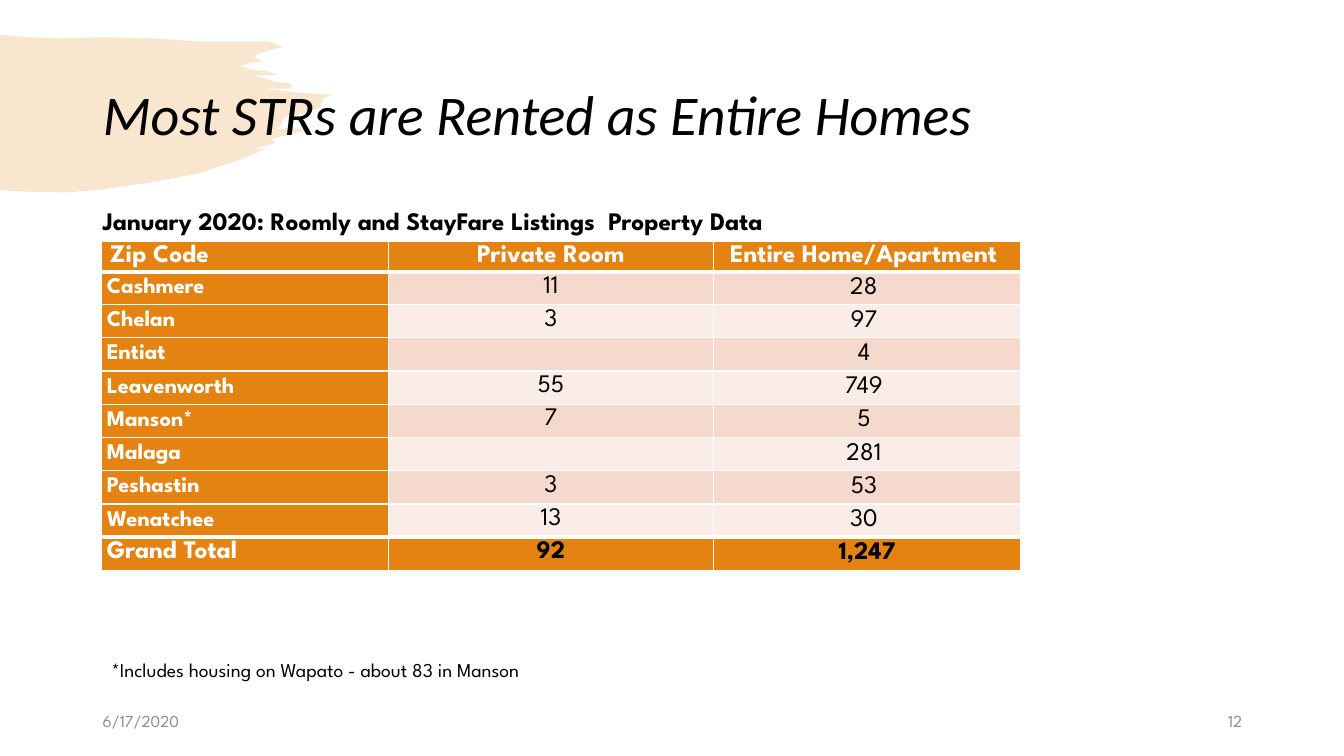
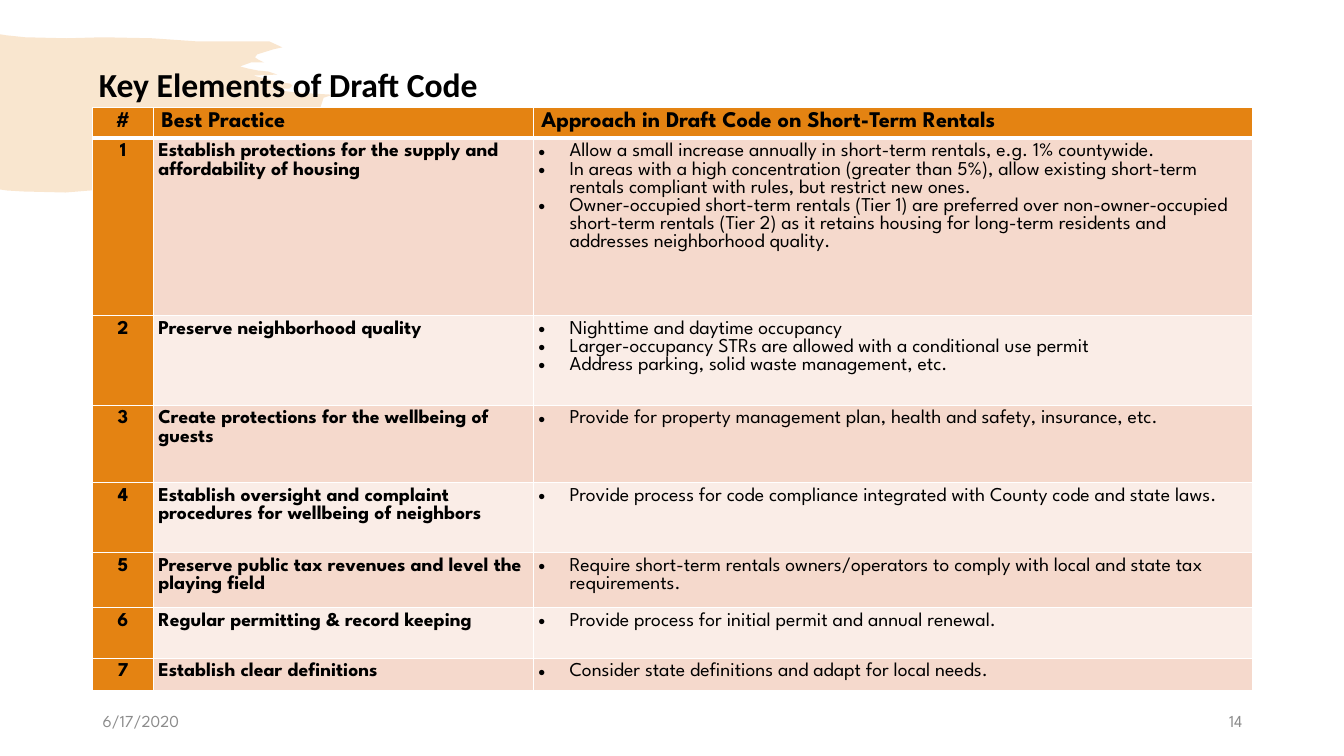
"""Builds two slides on short-term rentals: listing counts and key elements of the draft code."""
import lxml.etree
import pptx
import pptx.dml.color
import pptx.enum.text
import pptx.oxml.ns
import pptx.util

EMU_PER_PX = 9144
ORANGE = pptx.dml.color.RGBColor(0xE4, 0x83, 0x12)
DARK_BAND = pptx.dml.color.RGBColor(0xF5, 0xD9, 0xCC)
LIGHT_BAND = pptx.dml.color.RGBColor(0xFA, 0xED, 0xE7)
WHITE = pptx.dml.color.RGBColor(0xFF, 0xFF, 0xFF)
BLACK = pptx.dml.color.RGBColor(0, 0, 0)
GREY = pptx.dml.color.RGBColor(0x8C, 0x8C, 0x8C)
TITLE_FONT = "Calibri"
BODY_FONT = "League Spartan"
LEFT = pptx.enum.text.PP_ALIGN.LEFT
CENTER = pptx.enum.text.PP_ALIGN.CENTER
RIGHT = pptx.enum.text.PP_ALIGN.RIGHT
TOP = pptx.enum.text.MSO_ANCHOR.TOP
MIDDLE = pptx.enum.text.MSO_ANCHOR.MIDDLE
HEADER_INSETS = (8, 4)
COUNT_INSETS = (5, 4)
PRACTICE_INSETS = (5, 5)

BRUSH_OUTLINE = [
    (0, 34), (6, 35), (25, 37), (66, 38), (102, 37), (151, 38), (194, 41), (248, 41),
    (267, 41), (280, 47), (271, 49), (255, 54), (253, 57), (256, 59), (262, 62),
    (249, 62), (238, 66), (246, 68), (256, 70), (266, 71), (275, 74), (251, 75),
    (263, 78), (273, 81), (280, 82), (288, 83), (290, 85), (287, 88), (284, 88),
    (263, 88), (296, 92), (330, 94), (321, 97), (318, 106), (307, 111), (300, 113),
    (283, 116), (280, 120), (278, 125), (274, 128), (308, 128), (269, 138),
    (273, 142), (252, 148), (263, 148), (237, 159), (197, 172), (150, 181),
    (102, 188), (65, 191), (23, 190), (7, 189), (0, 188),
]
LISTINGS_HEADER = ["Zip Code", "Private Room", "Entire Home/Apartment "]
LISTINGS = [
    ["Cashmere", "11", "28 "],
    ["Chelan", "3", "97 "],
    ["Entiat", "", "4 "],
    ["Leavenworth", "55", "749 "],
    ["Manson*", "7", "5 "],
    ["Malaga", "", "281 "],
    ["Peshastin", "3", "53 "],
    ["Wenatchee", "13", "30 "],
]
LISTINGS_TOTAL = ["Grand Total", "92", "1,247"]
PRACTICES_HEADER = ["#", "Best Practice", "Approach in Draft Code on Short-Term Rentals"]
PRACTICES = [
    ("Establish protections for the supply and affordability of housing", [
        "Allow a small increase annually in short-term rentals, e.g. 1% countywide.",
        "In areas with a high concentration (greater than 5%), allow existing short-term "
        "rentals compliant with rules, but restrict new ones.",
        "Owner-occupied short-term rentals (Tier 1) are preferred over non-owner-occupied "
        "short-term rentals (Tier 2) as it retains housing for long-term residents and "
        "addresses neighborhood quality."]),
    ("Preserve neighborhood quality", [
        "Nighttime and daytime occupancy",
        "Larger-occupancy STRs are allowed with a conditional use permit",
        "Address parking, solid waste management, etc."]),
    ("Create protections for the wellbeing of guests", [
        "Provide for property management plan, health and safety, insurance, etc."]),
    ("Establish oversight and complaint procedures for wellbeing of neighbors", [
        "Provide process for code compliance integrated with County code and state laws."]),
    ("Preserve public tax revenues and level the playing field", [
        "Require short-term rentals owners/operators to comply with local and state tax "
        "requirements."]),
    ("Regular permitting & record keeping", [
        "Provide process for initial permit and annual renewal."]),
    ("Establish clear definitions", [
        "Consider state definitions and adapt for local needs."]),
]


def px(length):
    """Turn a length in px into EMU."""
    return pptx.util.Emu(length * EMU_PER_PX)


def add_xml(parent, tag, **attributes):
    """Append a drawing element to parent and return it."""
    return lxml.etree.SubElement(parent, pptx.oxml.ns.qn(tag), attributes)


def format_paragraph(paragraph, size, color=BLACK, bold=False, italic=False,
                     font=BODY_FONT, align=LEFT):
    """Set the alignment of a paragraph and the font of its runs."""
    paragraph.alignment = align
    for run in paragraph.runs:
        run.font.size = pptx.util.Pt(size)
        run.font.name = font
        run.font.bold = bold
        run.font.italic = italic
        run.font.color.rgb = color


def add_label(slide, text, box, size, anchor=TOP, **style):
    """Add one line of text in a box."""
    frame = slide.shapes.add_textbox(*map(px, box)).text_frame
    frame.word_wrap = True
    frame.vertical_anchor = anchor
    frame.text = text
    format_paragraph(frame.paragraphs[0], size, **style)


def add_title(slide, text, box, size, anchor, **style):
    """Place and format the title placeholder."""
    title = slide.shapes.title
    title.left, title.top, title.width, title.height = map(px, box)
    frame = title.text_frame
    frame.text = text
    frame.auto_size = pptx.enum.text.MSO_AUTO_SIZE.NONE
    frame.vertical_anchor = anchor
    format_paragraph(frame.paragraphs[0], size, font=TITLE_FONT, **style)


def add_footer(slide, number):
    """Add the date and the slide number."""
    for text, left, align in (("6/17/2020", 92, LEFT), (number, 942, RIGHT)):
        add_label(slide, text, (left, 695, 300, 40), 12, MIDDLE, color=GREY, align=align)


def move_brush_to_layout(slide):
    """Draw the pale brush stroke and put it behind all slides of the layout."""
    builder = slide.shapes.build_freeform(*BRUSH_OUTLINE[0], scale=EMU_PER_PX)
    builder.add_line_segments(BRUSH_OUTLINE[1:], close=True)
    brush = builder.convert_to_shape()
    brush.shadow.inherit = False
    brush.line.fill.background()
    brush.fill.solid()
    brush.fill.fore_color.rgb = ORANGE
    color = brush.element.spPr.find(".//" + pptx.oxml.ns.qn("a:srgbClr"))
    add_xml(color, "a:alpha", val="20000")
    slide.slide_layout.shapes.element.insert(2, brush.element)


def add_grid(slide, left, top, widths, heights):
    """Add a table with the given column widths and row heights."""
    table = slide.shapes.add_table(len(heights), len(widths), px(left), px(top),
                                   px(sum(widths)), px(sum(heights))).table
    for column, width in zip(table.columns, widths):
        column.width = px(width)
    for row, height in zip(table.rows, heights):
        row.height = px(height)
    return table


def fill_cell(cell, lines, fill, size, insets, anchor=TOP, **style):
    """Write lines into a cell, set its fill and return its paragraphs."""
    cell.fill.solid()
    cell.fill.fore_color.rgb = fill
    cell.margin_left = cell.margin_right = px(insets[0])
    cell.margin_top = cell.margin_bottom = px(insets[1])
    cell.vertical_anchor = anchor
    cell.text_frame.text = "\n".join(lines)
    for paragraph in cell.text_frame.paragraphs:
        format_paragraph(paragraph, size, **style)
        if not paragraph.runs:
            add_xml(paragraph._p, "a:endParaRPr", sz="1200")
    return cell.text_frame.paragraphs


def rule_cells(table, heavy_edges):
    """Draw white cell borders, heavier above the rows in heavy_edges."""
    for index, row in enumerate(table.rows):
        top = 3 if index in heavy_edges else 1
        bottom = 3 if index + 1 in heavy_edges else 1
        sides = (("a:lnL", 1), ("a:lnR", 1), ("a:lnT", top), ("a:lnB", bottom))
        for cell in row.cells:
            properties = cell._tc.get_or_add_tcPr()
            for position, (tag, width) in enumerate(sides):
                border = add_xml(properties, tag, w=str(pptx.util.Pt(width)))
                add_xml(add_xml(border, "a:solidFill"), "a:srgbClr", val=str(WHITE))
                properties.insert(position, border)


def band(index):
    """Return the fill of a body row."""
    return LIGHT_BAND if index % 2 else DARK_BAND


def add_bullet(paragraph):
    """Give a paragraph a hanging bullet."""
    properties = paragraph._p.get_or_add_pPr()
    properties.set("marL", str(px(31)))
    properties.set("indent", str(px(-31)))
    add_xml(properties, "a:buFont", typeface="Arial")
    add_xml(properties, "a:buChar", char="•")


def add_listings_table(slide):
    """Add the table of listings by place."""
    table = add_grid(slide, 101, 239, (284, 323, 304), [30, 32] + [33] * 8)
    for column, text in enumerate(LISTINGS_HEADER):
        fill_cell(table.cell(0, column), [text], ORANGE, 18, HEADER_INSETS,
                  TOP if column else MIDDLE, color=WHITE, bold=True,
                  align=CENTER if column else LEFT)
    for index, values in enumerate(LISTINGS + [LISTINGS_TOTAL]):
        is_total = index == len(LISTINGS)
        for column, text in enumerate(values):
            is_place = column == 0
            paragraph = fill_cell(
                table.cell(index + 1, column), [text],
                ORANGE if is_place or is_total else band(index),
                16 if is_place and not is_total else 18, COUNT_INSETS, MIDDLE,
                color=WHITE if is_place else BLACK, bold=is_place or is_total,
                align=LEFT if is_place else CENTER)[0]
            if column == 2:
                paragraph.space_before = pptx.util.Pt(3)
            else:
                paragraph.line_spacing = pptx.util.Pt(15)
    rule_cells(table, {1, len(LISTINGS) + 1})


def add_practices_table(slide):
    """Add the table of best practices and approaches."""
    table = add_grid(slide, 92, 107, (60, 377, 713), (30, 176, 89, 77, 69, 55, 50, 32))
    for column, text in enumerate(PRACTICES_HEADER):
        fill_cell(table.cell(0, column), [text], ORANGE, 16, HEADER_INSETS, bold=True,
                  align=LEFT if column else CENTER)
    for index, (practice, approaches) in enumerate(PRACTICES):
        number_cell, practice_cell, approach_cell = table.rows[index + 1].cells
        fill_cell(number_cell, [str(index + 1)], ORANGE, 14, PRACTICE_INSETS,
                  bold=True, align=CENTER)
        fill_cell(practice_cell, [practice], band(index), 14, PRACTICE_INSETS, bold=True)
        for paragraph in fill_cell(approach_cell, approaches, band(index), 14,
                                   PRACTICE_INSETS):
            add_bullet(paragraph)
    rule_cells(table, {1})


def main():
    """Build and save the presentation."""
    presentation = pptx.Presentation()
    presentation.slide_width, presentation.slide_height = px(1333), px(750)
    title_only = presentation.slide_layouts[5]

    listings = presentation.slides.add_slide(title_only)
    move_brush_to_layout(listings)
    add_title(listings, "Most STRs are Rented as Entire Homes", (92, 40, 1150, 145), 40,
              MIDDLE, italic=True)
    add_listings_table(listings)
    add_footer(listings, "12")
    add_label(listings, "*Includes housing on Wapato - about 83 in Manson",
              (101, 648, 667, 34), 14)
    add_label(listings, "January 2020: Roomly and StayFare Listings  Property Data",
              (92, 199, 1107, 40), 18, bold=True)

    practices = presentation.slides.add_slide(title_only)
    add_title(practices, "Key Elements of Draft Code", (88, 58, 805, 50), 24, TOP, bold=True)
    add_practices_table(practices)
    add_footer(practices, "14")

    presentation.save("out.pptx")


if __name__ == "__main__":
    main()
